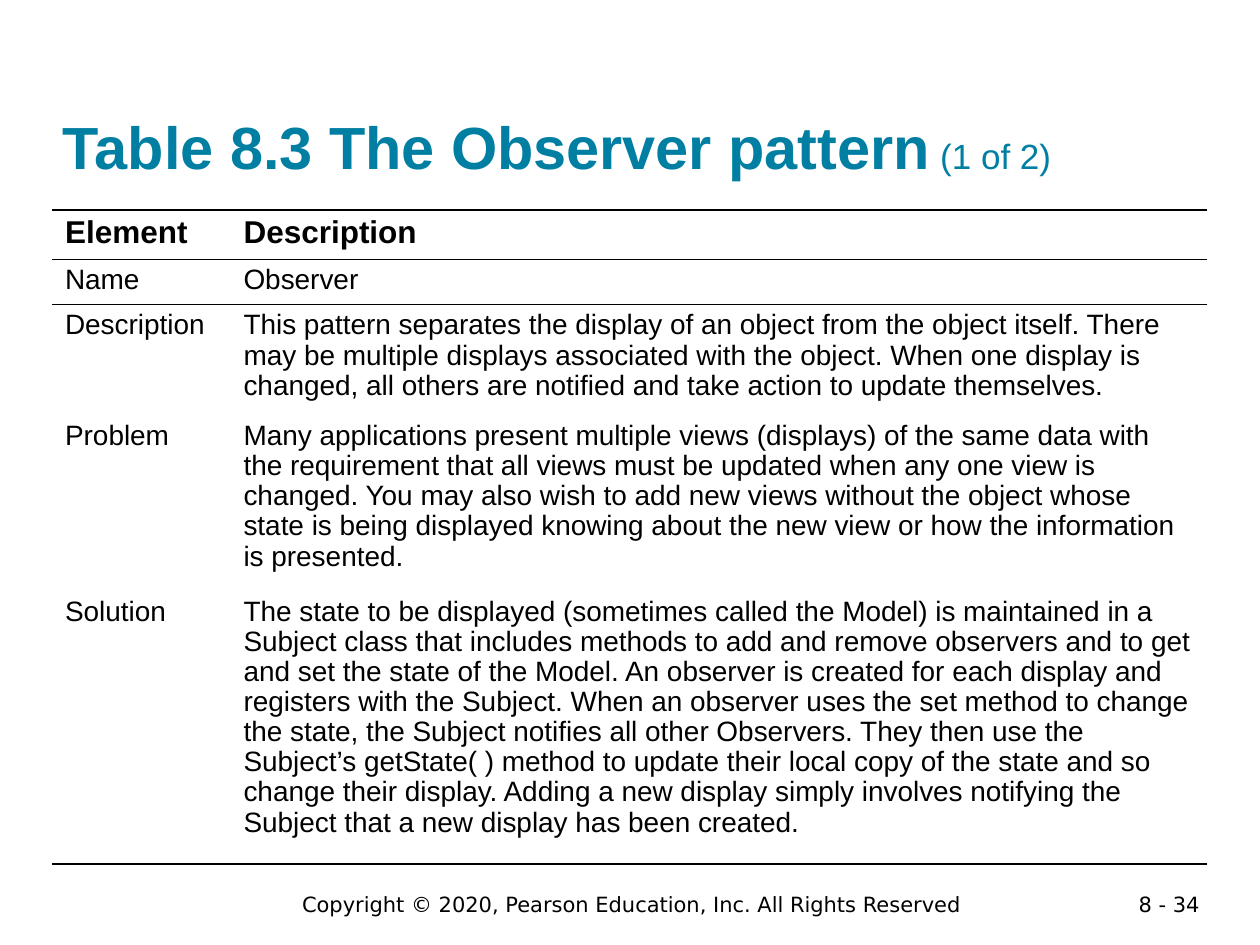
from lxml.etree import SubElement
from pptx import Presentation
from pptx.dml.color import RGBColor
from pptx.enum.text import MSO_ANCHOR as Anchor, PP_ALIGN as Align
from pptx.oxml.ns import qn
from pptx.util import Pt

BLACK, TEAL = "000000", "007FA3"

# Content
TITLE = [("Table 8.3 The Observer pattern", 34, True), (" ", 20, True), ("(1 of 2)", 20, False)]
COPYRIGHT = "Copyright © 2020, Pearson Education, Inc. All Rights Reserved"
PAGE_NUMBER = "8 - 34"
ROWS = [
    ("Element", "Description"),
    ("Name", "Observer"),
    ("Description",
     "This pattern separates the display of an object from the object itself. There may be "
     "multiple displays associated with the object. When one display is changed, all others "
     "are notified and take action to update themselves."),
    ("Problem",
     "Many applications present multiple views (displays) of the same data with the "
     "requirement that all views must be updated when any one view is changed. You may also "
     "wish to add new views without the object whose state is being displayed knowing about "
     "the new view or how the information is presented."),
    ("Solution",
     "The state to be displayed (sometimes called the Model) is maintained in a Subject class "
     "that includes methods to add and remove observers and to get and set the state of the "
     "Model. An observer is created for each display and registers with the Subject. When an "
     "observer uses the set method to change the state, the Subject notifies all other "
     "Observers. They then use the Subject’s getState( ) method to update their local copy of "
     "the state and so change their display. Adding a new display simply involves notifying "
     "the Subject that a new display has been created."),
]
COLUMN_WIDTHS = [102, 558]
ROW_HEIGHTS = [24, 22, 56, 99.4, 153.4]
RULED_SIDES = {0: ("T", "B"), 1: ("T", "B"), 2: ("T",), 4: ("B",)}


def color(hex_text):
    return RGBColor.from_string(hex_text)


def add_run(paragraph, text, size, bold=False, font="Arial", fill=BLACK):
    run = paragraph.add_run()
    run.text = text
    run.font.name = font
    run.font.size = Pt(size)
    run.font.bold = bold
    run.font.color.rgb = color(fill)


def add_text_box(slide, left, top, width, height, align):
    shape = slide.shapes.add_textbox(Pt(left), Pt(top), Pt(width), Pt(height))
    shape.text_frame.word_wrap = True
    shape.text_frame.paragraphs[0].alignment = align
    return shape.text_frame


def set_borders(cell, ruled):
    properties = cell._tc.get_or_add_tcPr()
    # Border lines come before the fill, so this runs first
    for side in "LRTB":
        line = SubElement(properties, qn(f"a:ln{side}"), w=str(Pt(1)))
        if side in ruled:
            fill = SubElement(line, qn("a:solidFill"))
            SubElement(fill, qn("a:srgbClr"), val=BLACK)
        else:
            SubElement(line, qn("a:noFill"))


def add_pattern_table(slide):
    frame = slide.shapes.add_table(len(ROWS), len(COLUMN_WIDTHS), Pt(30), Pt(120),
                                   Pt(sum(COLUMN_WIDTHS)), Pt(sum(ROW_HEIGHTS)))
    table = frame.table
    table.first_row = table.horz_banding = False
    for column, width in zip(table.columns, COLUMN_WIDTHS):
        column.width = Pt(width)
    for index, (row, height) in enumerate(zip(table.rows, ROW_HEIGHTS)):
        row.height = Pt(height)
        is_header = index == 0
        for cell, text in zip(row.cells, ROWS[index]):
            set_borders(cell, RULED_SIDES.get(index, ()))
            cell.fill.background()
            paragraph = cell.text_frame.paragraphs[0]
            paragraph.line_spacing = 0.97
            add_run(paragraph, text, 18 if is_header else 16, is_header)


def main():
    presentation = Presentation()
    presentation.slide_width, presentation.slide_height = Pt(720), Pt(540)
    slide = presentation.slides.add_slide(presentation.slide_layouts[6])

    # Footer
    for text, left, width, align in [(PAGE_NUMBER, 620.6, 72, Align.RIGHT),
                                     (COPYRIGHT, 118, 486, Align.CENTER)]:
        frame = add_text_box(slide, left, 506, width, 21.6, align)
        add_run(frame.paragraphs[0], text, 12, font="DejaVu Sans")

    # Pattern table
    add_pattern_table(slide)

    # Title
    frame = add_text_box(slide, 36, 17.3, 648, 86.4, Align.LEFT)
    frame.vertical_anchor = Anchor.BOTTOM
    frame.margin_left = frame.margin_right = frame.margin_top = frame.margin_bottom = 0
    for text, size, bold in TITLE:
        add_run(frame.paragraphs[0], text, size, bold, fill=TEAL)

    presentation.save("out.pptx")


if __name__ == "__main__":
    main()
